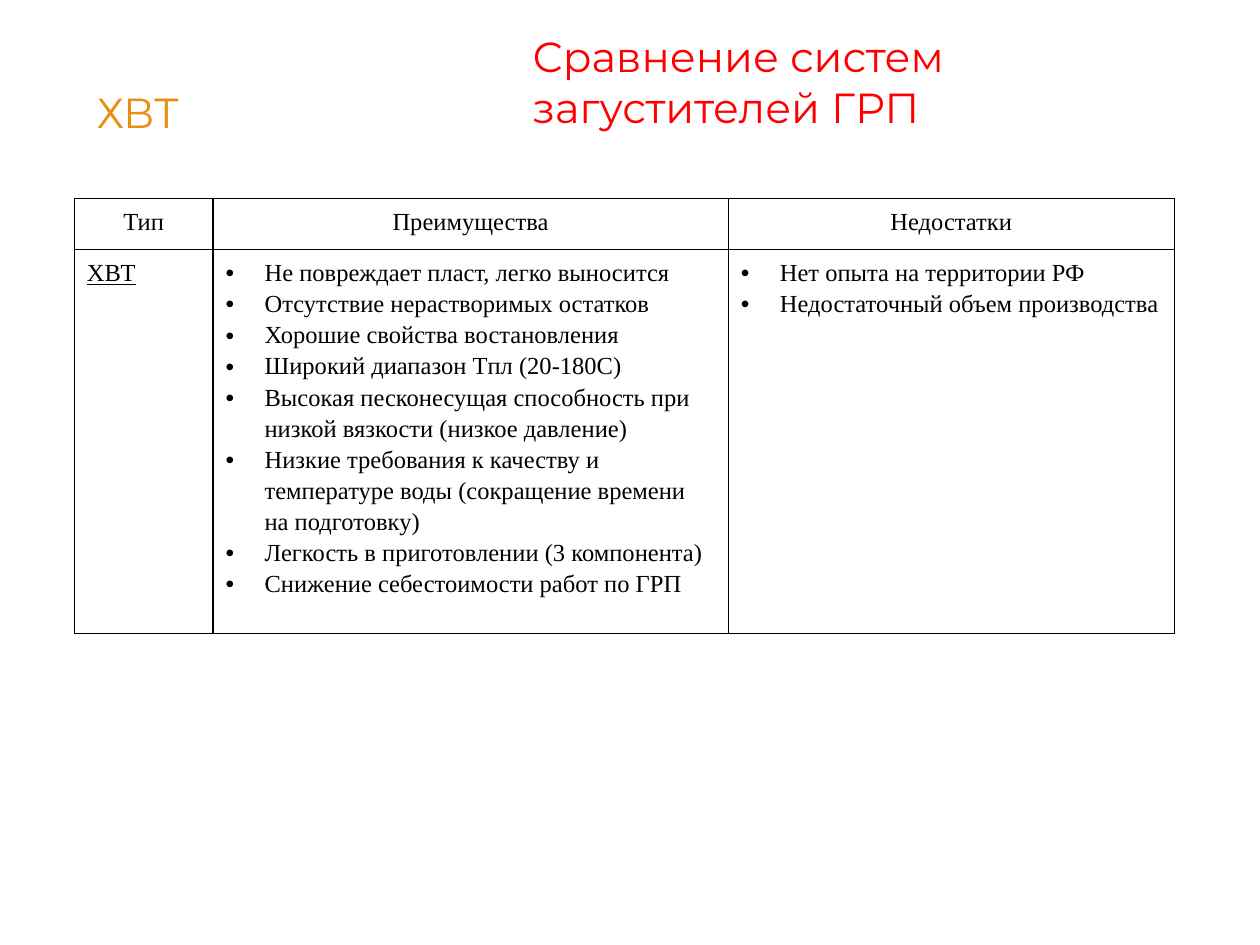
from dataclasses import dataclass
from lxml import etree
from pptx import Presentation
from pptx.dml.color import RGBColor
from pptx.enum import text
from pptx.oxml import ns
from pptx import util as u


@dataclass(frozen=True)
class Theme:
    head_font: str = "Montserrat"
    body_font: str = "Times New Roman"
    head_size: int = 24
    body_size: int = 14
    accent: str = "E98E15"
    title: str = "FF0000"
    ink: str = "000000"
    border: float = 1


theme = Theme()
prs = Presentation()
prs.slide_width, prs.slide_height = u.Inches(10), u.Inches(7.5)
W, H = prs.slide_width, prs.slide_height
slide = prs.slides.add_slide(prs.slide_layouts[6])


def write(tf, lines, font=theme.body_font, size=theme.body_size, color=theme.ink,
          spacing=1.15, align=text.PP_ALIGN.LEFT, underline=False, bullet=False):
    for i, line in enumerate(lines):
        p = tf.paragraphs[0] if i == 0 else tf.add_paragraph()
        p.alignment, p.line_spacing = align, spacing
        if bullet:
            pPr = p._p.get_or_add_pPr()
            pPr.set("marL", str(u.Inches(0.31)))
            pPr.set("indent", str(-u.Inches(0.31)))
            etree.SubElement(pPr, ns.qn("a:buFont"), typeface="Arial")
            etree.SubElement(pPr, ns.qn("a:buChar"), char="•")
        r = p.add_run()
        r.text = line
        r.font.name, r.font.size = font, u.Pt(size)
        r.font.color.rgb = RGBColor.from_string(color)
        r.font.underline = underline


def add_borders(cell):
    tcPr = cell._tc.get_or_add_tcPr()
    for i, side in enumerate(("lnL", "lnR", "lnT", "lnB")):
        ln = etree.Element(ns.qn(f"a:{side}"), w=str(u.Pt(theme.border)))
        fill = etree.SubElement(ln, ns.qn("a:solidFill"))
        etree.SubElement(fill, ns.qn("a:srgbClr"), val=theme.ink)
        tcPr.insert(i, ln)


headings = [
    ("ХВТ", 0.067, 0.087, 0.326, theme.accent, u.Pt(22), 0.36),
    ("Сравнение систем загустителей ГРП", 0.413, 0.028, 0.567, theme.title, 1.0, 0.05),
]
for words, x, y, w, color, spacing, inset in headings:
    sp = slide.shapes.add_textbox(int(x * W), int(y * H), int(w * W), int(0.116 * H))
    tf = sp.text_frame
    tf.word_wrap = True
    tf.vertical_anchor = text.MSO_ANCHOR.MIDDLE
    tf.margin_bottom = u.Inches(inset)
    write(tf, [words], font=theme.head_font, size=theme.head_size,
          color=color, spacing=spacing)

header = dict(align=text.PP_ALIGN.CENTER)
items = dict(bullet=True)
rows = [
    [(["Тип"], header), (["Преимущества"], header), (["Недостатки"], header)],
    [
        (["ХВТ"], dict(underline=True)),
        ([
            "Не повреждает пласт, легко выносится",
            "Отсутствие нерастворимых остатков",
            "Хорошие свойства востановления",
            "Широкий диапазон Tпл (20-180С)",
            "Высокая песконесущая способность при низкой вязкости (низкое давление)",
            "Низкие требования к качеству и температуре воды (сокращение времени на подготовку)",
            "Легкость в приготовлении (3 компонента)",
            "Снижение себестоимости работ по ГРП",
        ], items),
        (["Нет опыта на территории РФ", "Недостаточный объем производства"], items),
    ],
]
col_shares = [0.11, 0.409, 0.354]
row_shares = [0.054, 0.376]
table = slide.shapes.add_table(
    len(rows), len(col_shares), int(0.059 * W), int(0.21 * H),
    int(sum(col_shares) * W), int(sum(row_shares) * H)).table
table.first_row = table.horz_banding = False
for col, share in zip(table.columns, col_shares):
    col.width = int(share * W)
for row, share, contents in zip(table.rows, row_shares, rows):
    row.height = int(share * H)
    for cell, (lines, style) in zip(row.cells, contents):
        cell.fill.background()
        add_borders(cell)
        write(cell.text_frame, lines, **style)

prs.save("out.pptx")
